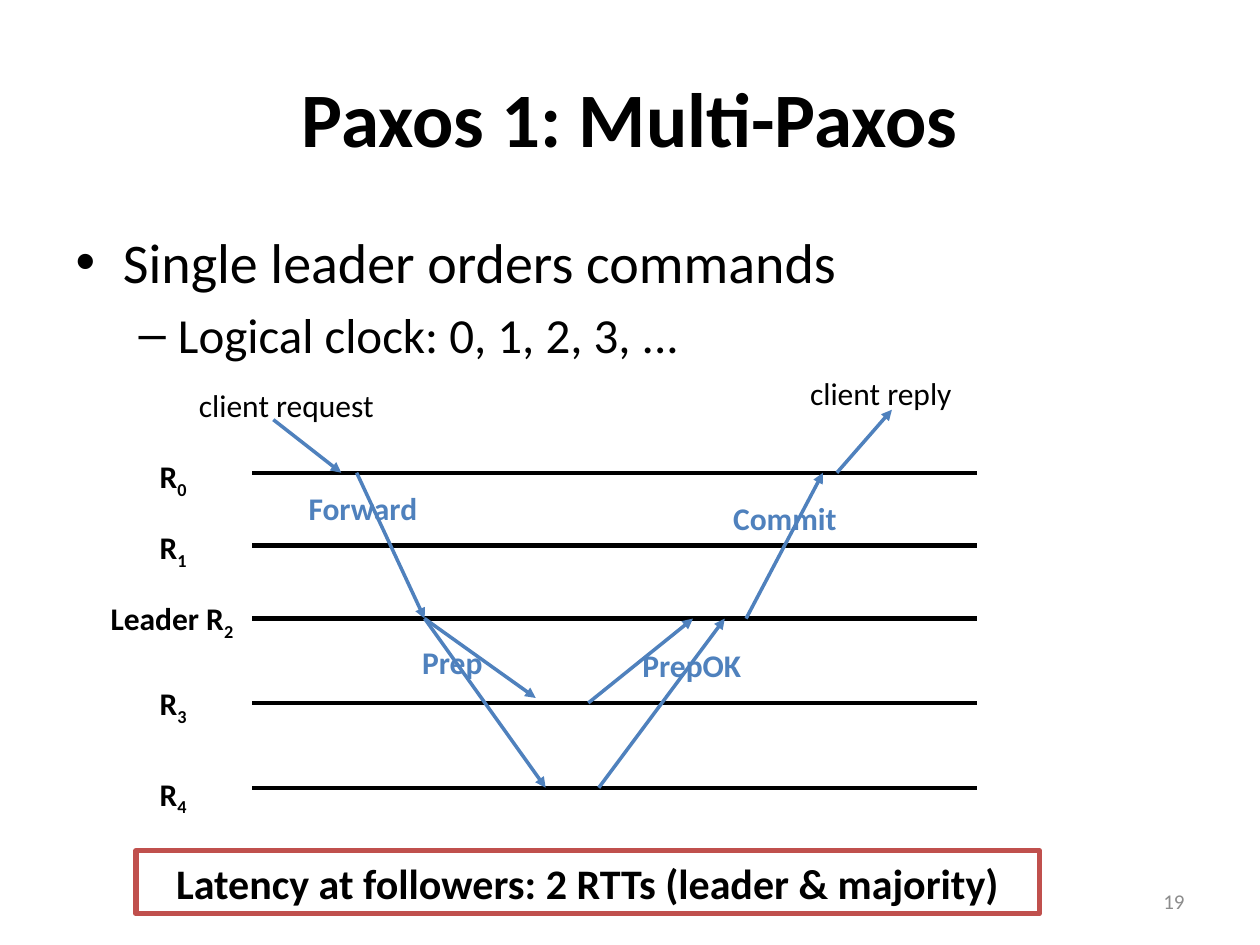
import pptx
import pptx.util
import pptx.dml.color
import pptx.enum.shapes
import pptx.enum.text
import pptx.oxml.ns
import lxml.etree

Cm, Pt = pptx.util.Cm, pptx.util.Pt
Align = pptx.enum.text.PP_ALIGN
Anchor = pptx.enum.text.MSO_ANCHOR
Fit = pptx.enum.text.MSO_AUTO_SIZE
qn = pptx.oxml.ns.qn

HUES = {"ink": "000000", "blue": "4F81BD", "red": "C0504D", "gray": "8C8C8C"}


def hue(name):
    return pptx.dml.color.RGBColor.from_string(HUES[name])


class Board:
    face = "Calibri"

    def __init__(self, slide):
        self.slide = slide

    def style(self, para, size, color="ink", bold=False, align=None):
        font = para.font
        font.name, font.size, font.bold = self.face, Pt(size), bold
        font.color.rgb = hue(color)
        if align is not None:
            para.alignment = align

    def place(self, shape, x, y, w, h):
        shape.left, shape.top, shape.width, shape.height = Cm(x), Cm(y), Cm(w), Cm(h)

    def title(self, text, box):
        shape = self.slide.shapes.title
        self.place(shape, *box)
        shape.text_frame.text = text
        self.style(shape.text_frame.paragraphs[0], 44, bold=True, align=Align.CENTER)

    def bullets(self, items, box):
        shape = self.slide.placeholders[1]
        self.place(shape, *box)
        frame = shape.text_frame
        frame.text = "\n".join(text for text, size in items)
        for level, (para, (text, size)) in enumerate(zip(frame.paragraphs, items)):
            para.level = level
            self.style(para, size)

    def label(self, text, x, y, w, color="ink", bold=True, sub=None):
        frame = self.slide.shapes.add_textbox(Cm(x), Cm(y), Cm(w), Cm(1.02)).text_frame
        frame.word_wrap = False
        frame.auto_size = Fit.SHAPE_TO_FIT_TEXT
        para = frame.paragraphs[0]
        para.add_run().text = text
        if sub is not None:
            run = para.add_run()
            run.text = str(sub)
            run._r.get_or_add_rPr().set("baseline", "-25000")
        self.style(para, 18, color, bold)

    def line(self, x1, y1, x2, y2, color="ink", width=2.5, arrow=False):
        link = self.slide.shapes.add_connector(
            pptx.enum.shapes.MSO_CONNECTOR.STRAIGHT, Cm(x1), Cm(y1), Cm(x2), Cm(y2))
        link.line.color.rgb = hue(color)
        link.line.width = Pt(width)
        if arrow:
            lxml.etree.SubElement(link.line._get_or_add_ln(), qn("a:tailEnd"), type="triangle")
        lxml.etree.SubElement(link._element.spPr, qn("a:effectLst"))

    def banner(self, text, x, y, w, h):
        shape = self.slide.shapes.add_shape(
            pptx.enum.shapes.MSO_SHAPE.RECTANGLE, Cm(x), Cm(y), Cm(w), Cm(h))
        shape.shadow.inherit = False
        shape.fill.background()
        shape.line.color.rgb = hue("red")
        shape.line.width = Pt(3)
        frame = shape.text_frame
        frame.word_wrap = True
        frame.text = text
        self.style(frame.paragraphs[0], 24, bold=True, align=Align.CENTER)

    def number(self, text, x, y, w, h):
        frame = self.slide.shapes.add_textbox(Cm(x), Cm(y), Cm(w), Cm(h)).text_frame
        frame.word_wrap = True
        frame.vertical_anchor = Anchor.MIDDLE
        frame.text = text
        self.style(frame.paragraphs[0], 12, "gray", align=Align.RIGHT)


def main():
    deck = pptx.Presentation()
    deck.slide_width, deck.slide_height = Cm(25.4), Cm(19.05)
    board = Board(deck.slides.add_slide(deck.slide_layouts[1]))

    # Heading and list
    board.title("Paxos 1: Multi-Paxos", (1.27, 0.76, 22.86, 3.18))
    board.bullets([("Single leader orders commands", 32),
                   ("Logical clock: 0, 1, 2, 3, ...", 28)],
                  (1.27, 4.45, 22.86, 12.57))

    # Replica timelines
    rows = [9.53, 11, 12.47, 14.17, 15.88]
    for y in rows:
        board.line(5.08, y, 19.69, y)
    for rank, y in enumerate([9.09, 10.52, 11.96, 13.67, 15.49]):
        if rank == 2:
            board.label("Leader R", 1.98, y, 3.05, sub=rank)
        else:
            board.label("R", 2.97, y, 1.09, sub=rank)

    # Messages between replicas
    first, lead, third, last = rows[0], rows[2], rows[3], rows[4]
    for ends in [
        (5.51, 8.46, 6.88, first),
        (7.19, first, 8.56, lead),
        (8.56, lead, 11, last),
        (8.56, lead, 10.8, 14.07),
        (12.07, last, 14.61, lead),
        (11.86, third, 13.97, lead),
        (15.04, lead, 16.59, first),
        (16.87, first, 17.98, 8.26),
    ]:
        board.line(*ends, color="blue", width=2, arrow=True)

    # Message names
    for text, x, y, w in [
        ("Forward", 5.97, 9.73, 2.72),
        ("Prep", 8.26, 12.83, 1.73),
        ("PrepOK", 12.7, 12.9, 2.51),
        ("Commit", 14.53, 9.93, 2.62),
    ]:
        board.label(text, x, y, w, "blue")
    board.label("client request", 3.76, 7.65, 4.09, bold=False)
    board.label("client reply", 16.08, 7.42, 3.4, bold=False)

    # Conclusion and page number
    board.banner("Latency at followers: 2 RTTs (leader & majority)", 2.74, 17.15, 18.21, 1.27)
    board.number("19", 22.86, 17.65, 1.27, 1.02)

    deck.save("out.pptx")


if __name__ == "__main__":
    main()
